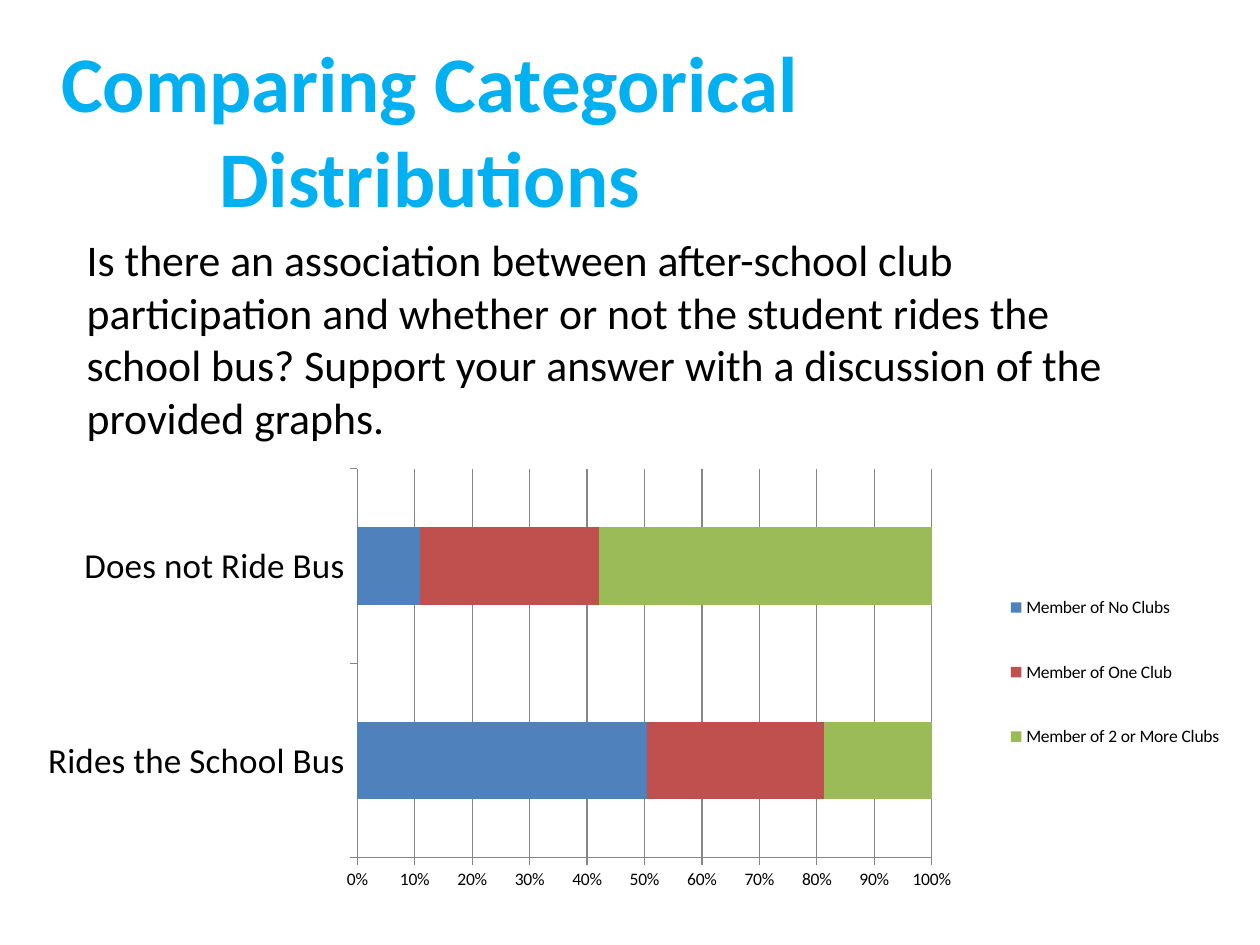
from dataclasses import dataclass

from lxml.etree import SubElement
from pptx import Presentation
from pptx.chart.data import CategoryChartData
from pptx.dml.color import RGBColor
from pptx.enum.chart import XL_CHART_TYPE, XL_LEGEND_POSITION, XL_TICK_MARK
from pptx.enum.text import MSO_ANCHOR, PP_ALIGN
from pptx.oxml.ns import qn
from pptx.util import Inches, Pt


@dataclass(frozen=True)
class Theme:
    font: str = "Calibri"
    title: RGBColor = RGBColor(0x00, 0xB0, 0xF0)
    text: RGBColor = RGBColor(0x00, 0x00, 0x00)
    grid: RGBColor = RGBColor(0x86, 0x86, 0x86)
    title_size: int = 45
    question_size: int = 25
    category_size: int = 20
    chart_size: int = 10


THEME = Theme()

TITLE = "Comparing Categorical Distributions"
QUESTION = (
    "Is there an association between after-school club participation and "
    "whether or not the student rides the school bus? Support your answer "
    "with a discussion of the provided graphs."
)
CATEGORIES = ["Rides the School Bus", "Does not Ride Bus"]
CLUB_SERIES = [
    ("Member of No Clubs", (51, 11), RGBColor(0x4F, 0x81, 0xBD)),
    ("Member of One Club", (31, 31), RGBColor(0xC0, 0x50, 0x4D)),
    ("Member of 2 or More Clubs", (19, 58), RGBColor(0x9B, 0xBB, 0x59)),
]


def style_font(font, size, color):
    font.name = THEME.font
    font.size = Pt(size)
    font.color.rgb = color


def add_text(slide, box, text, size, color):
    shape = slide.shapes.add_textbox(*box)
    text_frame = shape.text_frame
    text_frame.word_wrap = True
    text_frame.text = text
    style_font(text_frame.paragraphs[0].runs[0].font, size, color)
    return text_frame


def add_title(slide, box):
    text_frame = add_text(slide, box, TITLE, THEME.title_size, THEME.title)
    text_frame.vertical_anchor = MSO_ANCHOR.MIDDLE
    paragraph = text_frame.paragraphs[0]
    paragraph.alignment = PP_ALIGN.CENTER
    paragraph.runs[0].font.bold = True


def add_question(slide, box):
    add_text(slide, box, QUESTION, THEME.question_size, THEME.text)


def set_layout(element, fractions, inner=False):
    layout = element.find(qn("c:layout"))
    if layout is None:
        layout = SubElement(element, qn("c:layout"))
        anchor = element.find(qn("c:legendPos"))
        if anchor is None:
            element.insert(0, layout)
        else:
            anchor.addnext(layout)
    manual = SubElement(layout, qn("c:manualLayout"))
    settings = [("layoutTarget", "inner")] if inner else []
    settings += [("xMode", "edge"), ("yMode", "edge")]
    settings += zip("xywh", fractions)
    for name, value in settings:
        SubElement(manual, qn(f"c:{name}")).set("val", str(value))


def style_axis(axis, size):
    style_font(axis.tick_labels.font, size, THEME.text)
    axis.major_tick_mark = XL_TICK_MARK.OUTSIDE
    axis.minor_tick_mark = XL_TICK_MARK.NONE
    axis.format.line.color.rgb = THEME.grid


def add_club_chart(slide, box):
    chart_data = CategoryChartData()
    chart_data.categories = CATEGORIES
    for name, values, _ in CLUB_SERIES:
        chart_data.add_series(name, values)
    chart = slide.shapes.add_chart(
        XL_CHART_TYPE.BAR_STACKED_100, *box, chart_data
    ).chart
    style_font(chart.font, THEME.chart_size, THEME.text)
    chart.has_title = False

    plot = chart.plots[0]
    plot.gap_width = 150
    plot.overlap = 100
    plot.vary_by_categories = False
    for series, (_, _, color) in zip(plot.series, CLUB_SERIES):
        series.format.fill.solid()
        series.format.fill.fore_color.rgb = color

    style_axis(chart.category_axis, THEME.category_size)
    chart.category_axis.has_major_gridlines = False
    value_axis = chart.value_axis
    style_axis(value_axis, THEME.chart_size)
    value_axis.minimum_scale = 0
    value_axis.maximum_scale = 1
    value_axis.major_unit = 0.1
    value_axis.has_major_gridlines = True
    value_axis.major_gridlines.format.line.color.rgb = THEME.grid
    value_axis.tick_labels.number_format = "0%"
    value_axis.tick_labels.number_format_is_linked = False

    chart.has_legend = True
    legend = chart.legend
    legend.position = XL_LEGEND_POSITION.RIGHT
    legend.include_in_layout = False
    style_font(legend.font, THEME.chart_size, THEME.text)

    plot_area = chart.element.find(f".//{qn('c:plotArea')}")
    legend_element = chart.element.find(f".//{qn('c:legend')}")
    set_layout(plot_area, (0.28, 0.04, 0.47, 0.88), inner=True)
    set_layout(legend_element, (0.81, 0.23, 0.18, 0.54))


def main():
    presentation = Presentation()
    presentation.slide_width = Inches(10)
    presentation.slide_height = Inches(7.5)
    slide = presentation.slides.add_slide(presentation.slide_layouts[6])
    add_title(slide, (Inches(0.31), Inches(0.4), Inches(6.2), Inches(1.24)))
    add_club_chart(slide, (Inches(0.12), Inches(3.58), Inches(9.7), Inches(3.51)))
    add_question(slide, (Inches(0.59), Inches(1.8), Inches(8.8), Inches(1.78)))
    presentation.save("out.pptx")


if __name__ == "__main__":
    main()
